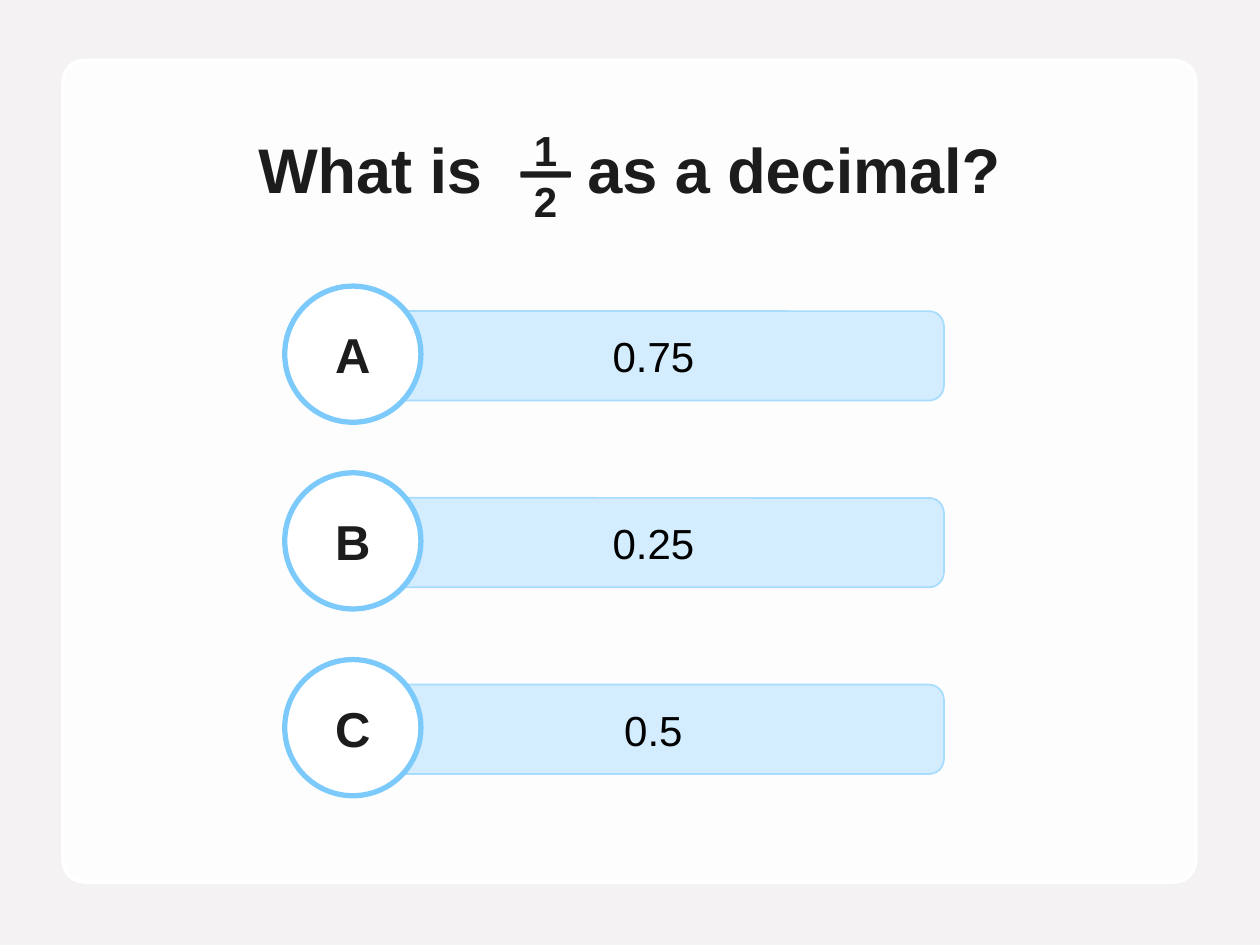
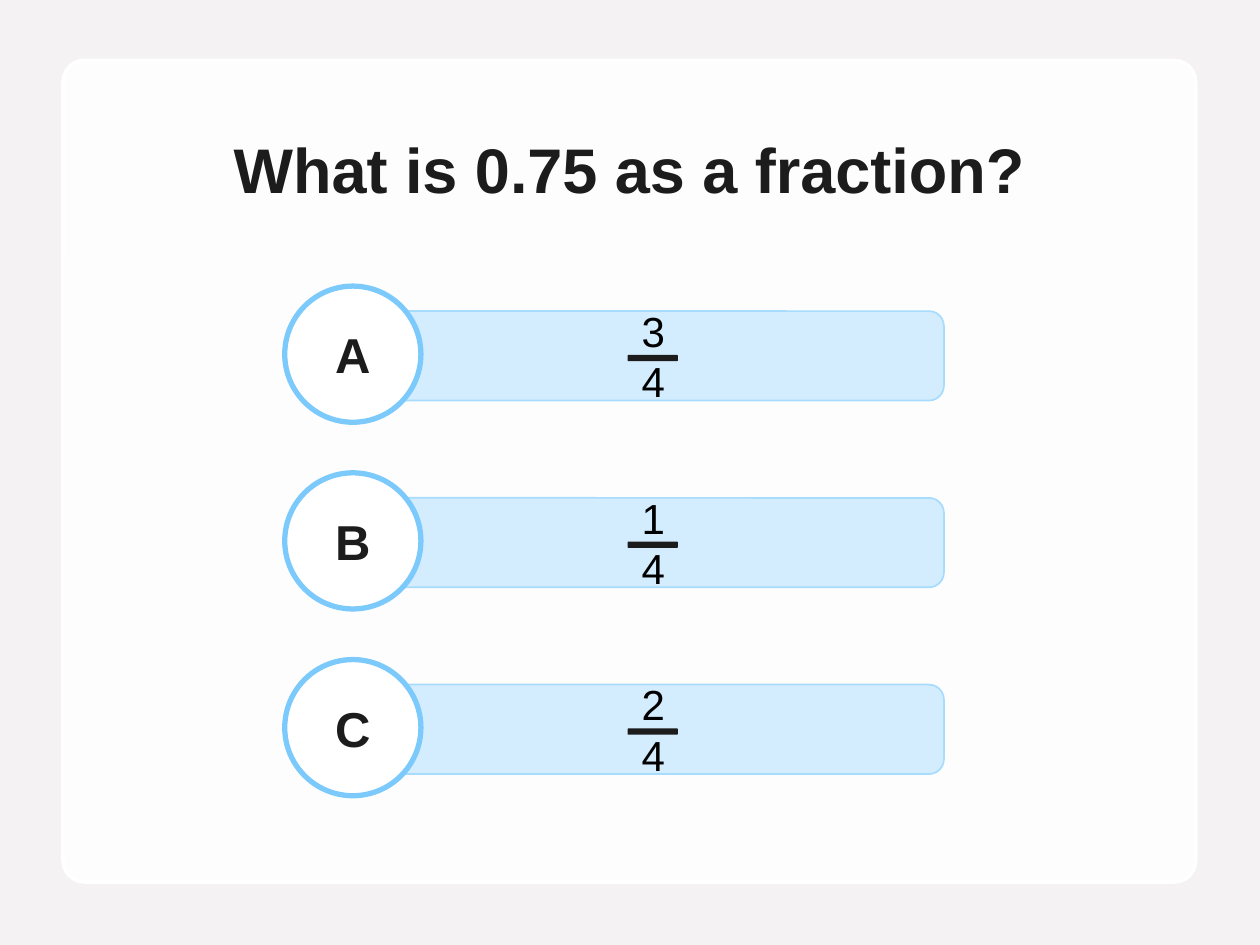
import pptx
import pptx.dml.color
import pptx.enum.shapes
import pptx.enum.text
import pptx.oxml
import pptx.oxml.ns
import pptx.util

Pt = pptx.util.Pt
RGB = pptx.dml.color.RGBColor
SHAPE = pptx.enum.shapes.MSO_SHAPE
ANCHOR = pptx.enum.text.MSO_ANCHOR

BACKDROP = RGB(0xF4, 0xF2, 0xF2)
WHITE = RGB(0xFF, 0xFF, 0xFF)
INK = RGB(0x1C, 0x1C, 0x1C)
BLACK = RGB(0x00, 0x00, 0x00)
BAR_FILL = RGB(0xD3, 0xED, 0xFE)
BAR_EDGE = RGB(0xA7, 0xDC, 0xFD)
RING = RGB(0x7B, 0xCA, 0xFB)

FONT = "Arial"
CARD_LEFT, CARD_WIDTH = 36, 647.3
BAR_TOP, BAR_HEIGHT = 177.8, 51.1
BADGE_TOP, BADGE_SIZE = 163.5, 77.8
ROW_PITCH = 106.7
VINCULUM_WIDTH = 28.8


def write(shape, paragraphs, size, color=INK, bold=False, insets=(7.2, 3.6),
          anchor=ANCHOR.MIDDLE, line_spacing=None, gap=None):
    frame = shape.text_frame
    frame.word_wrap = True
    frame.vertical_anchor = anchor
    frame.margin_left = frame.margin_right = Pt(insets[0])
    frame.margin_top = frame.margin_bottom = Pt(insets[1])
    for index, runs in enumerate(paragraphs):
        paragraph = frame.add_paragraph() if index else frame.paragraphs[0]
        paragraph.alignment = pptx.enum.text.PP_ALIGN.CENTER
        paragraph.line_spacing = line_spacing
        for text in [runs] if isinstance(runs, str) else runs:
            run = paragraph.add_run()
            run.text = text
            run.font.name = FONT
            run.font.size = Pt(size)
            run.font.bold = bold
            run.font.color.rgb = color
            if gap and text == " ":
                run.font._element.set("spc", str(gap * 100))


class QuizDeck:
    """Holds the quiz style and the slide being built."""

    def __init__(self):
        self.deck = pptx.Presentation()
        self.deck.slide_width, self.deck.slide_height = Pt(720), Pt(540)
        self.slide = None

    def panel(self, preset, left, top, width, height, fill, edge=None, weight=1):
        shape = self.slide.shapes.add_shape(
            preset, Pt(left), Pt(top), Pt(width), Pt(height))
        shape.shadow.inherit = False
        shape.fill.solid()
        shape.fill.fore_color.rgb = fill
        if edge is None:
            shape.line.fill.background()
        else:
            shape.line.color.rgb = edge
            shape.line.width = Pt(weight)
        return shape

    def label(self, left, top, width, height, paragraphs, **style):
        box = self.slide.shapes.add_textbox(Pt(left), Pt(top), Pt(width), Pt(height))
        write(box, paragraphs, **style)

    def start_slide(self):
        self.slide = self.deck.slides.add_slide(self.deck.slide_layouts[6])
        backdrop = self.slide.background.fill
        backdrop.solid()
        backdrop.fore_color.rgb = BACKDROP
        card = self.panel(SHAPE.ROUNDED_RECTANGLE, CARD_LEFT, 34.5, CARD_WIDTH, 469.5,
                          WHITE, WHITE, 2)
        card.adjustments[0] = 0.026
        tint = card.fill._xPr.find(".//" + pptx.oxml.ns.qn("a:srgbClr"))
        tint.append(pptx.oxml.parse_xml(
            f'<a:alpha {pptx.oxml.ns.nsdecls("a")} val="90000"/>'))

    def question(self, runs, gap=None):
        self.label(CARD_LEFT, 59.8, CARD_WIDTH, 78.5, [runs], size=36, bold=True,
                   insets=(20, 20), line_spacing=0.9, gap=gap)

    def vinculum(self, left, top):
        self.panel(SHAPE.ROUNDED_RECTANGLE, left, top, VINCULUM_WIDTH, 3.6, INK)

    def question_fraction(self, numerator, denominator):
        left = 297.4
        self.label(left, 65.5, VINCULUM_WIDTH, 69.8, [numerator, denominator], size=24,
                   bold=True, insets=(0, 5.8), anchor=ANCHOR.TOP)
        self.vinculum(left, 97.9)

    def answer(self, row, letter, parts):
        offset = row * ROW_PITCH
        bar = self.panel(SHAPE.ROUNDED_RECTANGLE, 207.4, BAR_TOP + offset, 332, BAR_HEIGHT,
                         BAR_FILL, BAR_EDGE)
        write(bar, parts, size=24, color=BLACK)
        if len(parts) == 2:
            self.vinculum(358.6, BAR_TOP + offset + 25)
        badge = self.panel(SHAPE.OVAL, 162.7, BADGE_TOP + offset, BADGE_SIZE, BADGE_SIZE,
                           WHITE, RING, 3)
        write(badge, [letter], size=28, bold=True)

    def answers(self, choices):
        for row, (letter, choice) in enumerate(zip("ABC", choices)):
            self.answer(row, letter, choice.split("/"))


def main():
    quiz = QuizDeck()

    quiz.start_slide()
    quiz.question(["What is", " ", "as a decimal?"], gap=50)
    quiz.question_fraction("1", "2")
    quiz.answers(["0.75", "0.25", "0.5"])

    quiz.start_slide()
    quiz.question("What is 0.75 as a fraction?")
    quiz.answers(["3/4", "1/4", "2/4"])

    quiz.deck.save("out.pptx")


if __name__ == "__main__":
    main()
